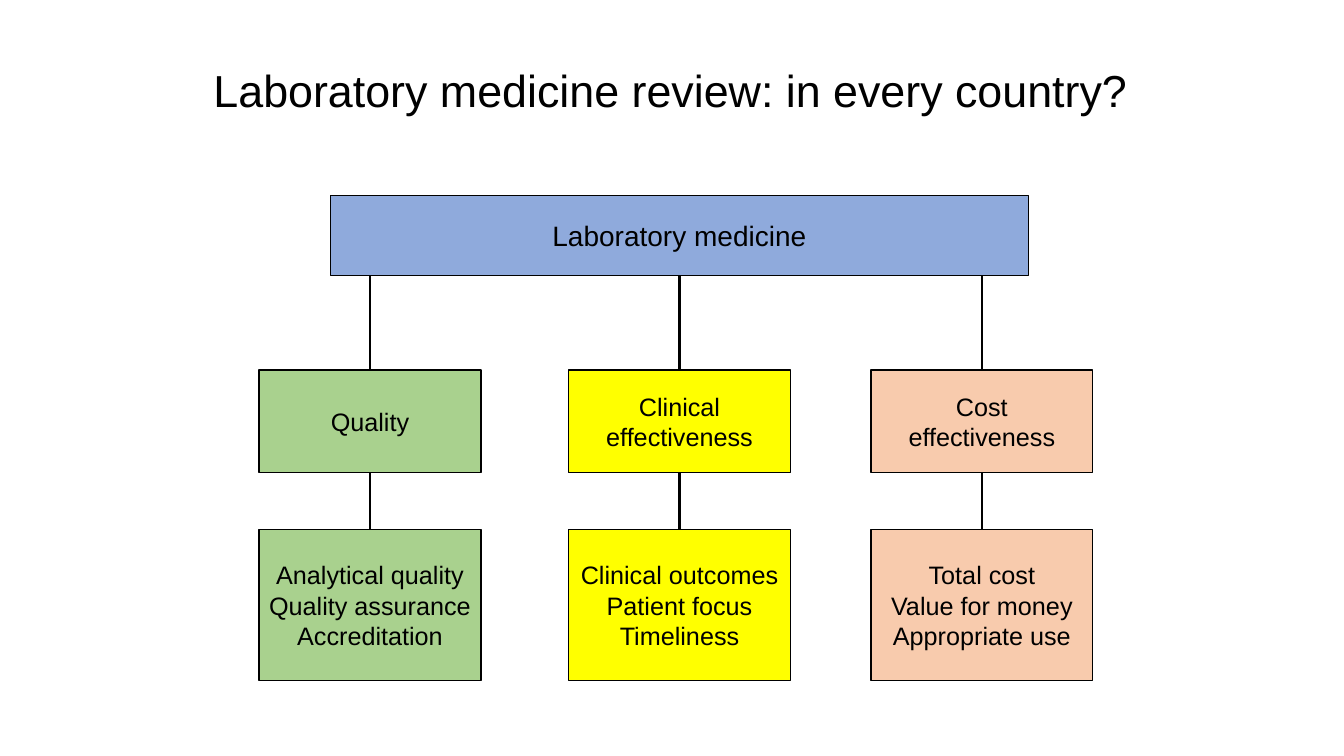
from dataclasses import dataclass

from lxml.etree import SubElement
from pptx import Presentation
from pptx.dml.color import RGBColor as Rgb
from pptx.enum.shapes import MSO_CONNECTOR as Link, MSO_SHAPE as Form
from pptx.enum.text import MSO_ANCHOR as Anchor, PP_ALIGN as Align
from pptx.oxml.ns import qn
from pptx.shapes.autoshape import Shape
from pptx.shapes.shapetree import SlideShapes as Tree
from pptx.util import Cm, Pt

HUES = {
    "ink": "000000",
    "blue": "8FAADC",
    "green": "A9D18E",
    "yellow": "FFFF00",
    "peach": "F8CBAD",
}
FRAME = {
    "word_wrap": True,
    "vertical_anchor": Anchor.MIDDLE,
    "margin_left": Cm(0.2),
    "margin_right": Cm(0.2),
}
TITLE = FRAME | {"margin_left": Cm(0.25), "margin_right": Cm(0.25)}
WIDTH = 5.59


@dataclass
class Box:
    left: float
    top: float
    width: float
    height: float
    hue: str
    size: int
    lines: list[str]


@dataclass
class Pillar:
    left: float
    hue: str
    head: list[str]
    goals: list[str]


ROOT = Box(8.33, 4.93, 17.59, 2.01, "blue", 20, ["Laboratory medicine"])
PILLARS = [
    Pillar(6.53, "green", ["Quality"],
           ["Analytical quality", "Quality assurance", "Accreditation"]),
    Pillar(14.33, "yellow", ["Clinical effectiveness"],
           ["Clinical outcomes", "Patient focus", "Timeliness"]),
    Pillar(21.95, "peach", ["Cost", "effectiveness"],
           ["Total cost", "Value for money", "Appropriate use"]),
]


def apply(item: object, values: dict) -> None:
    for name, value in values.items():
        setattr(item, name, value)


def color(name: str) -> Rgb:
    return Rgb.from_string(HUES[name])


def write(shape: Shape, lines: list[str], size: int, frame: dict, para: dict) -> None:
    text = shape.text_frame
    text.text = "\n".join(lines)
    apply(text, frame)
    for line in text.paragraphs:
        apply(line, para)
        apply(line.font, {"name": "Arial", "size": Pt(size)})
        line.font.color.rgb = color("ink")


def draw(tree: Tree, box: Box) -> Shape:
    shape = tree.add_shape(Form.RECTANGLE, Cm(box.left), Cm(box.top),
                           Cm(box.width), Cm(box.height))
    shape.shadow.inherit = False
    shape.fill.solid()
    shape.fill.fore_color.rgb = color(box.hue)
    shape.line.color.rgb = color("ink")
    shape.line.width = Pt(1)
    write(shape, box.lines, box.size, FRAME, {"alignment": Align.CENTER})
    return shape


def join(tree: Tree, upper: Shape, lower: Shape) -> None:
    mid = lower.left + lower.width // 2
    line = tree.add_connector(Link.STRAIGHT, mid, upper.top + upper.height,
                              mid, lower.top)
    if abs(upper.left + upper.width // 2 - mid) < Cm(0.01):
        line.begin_connect(upper, 2)
    line.end_connect(lower, 0)
    line.line.color.rgb = color("ink")
    line.line.width = Pt(1.5)
    SubElement(line._element.spPr, qn("a:effectLst"))


def main() -> None:
    deck = Presentation()
    apply(deck, {"slide_width": Cm(33.87), "slide_height": Cm(19.05)})
    tree = deck.slides.add_slide(deck.slide_layouts[6]).shapes

    title = tree.add_textbox(Cm(5.13), Cm(0.76), Cm(23.8), Cm(3.18))
    write(title, ["Laboratory medicine review: in every country?"], 32,
          TITLE, {"line_spacing": 0.9})

    root = draw(tree, ROOT)
    for col in PILLARS:
        head = draw(tree, Box(col.left, 9.32, WIDTH, 2.59, col.hue, 18, col.head))
        goals = draw(tree, Box(col.left, 13.34, WIDTH, 3.81, col.hue, 18, col.goals))
        join(tree, root, head)
        join(tree, head, goals)

    deck.save("out.pptx")


if __name__ == "__main__":
    main()
